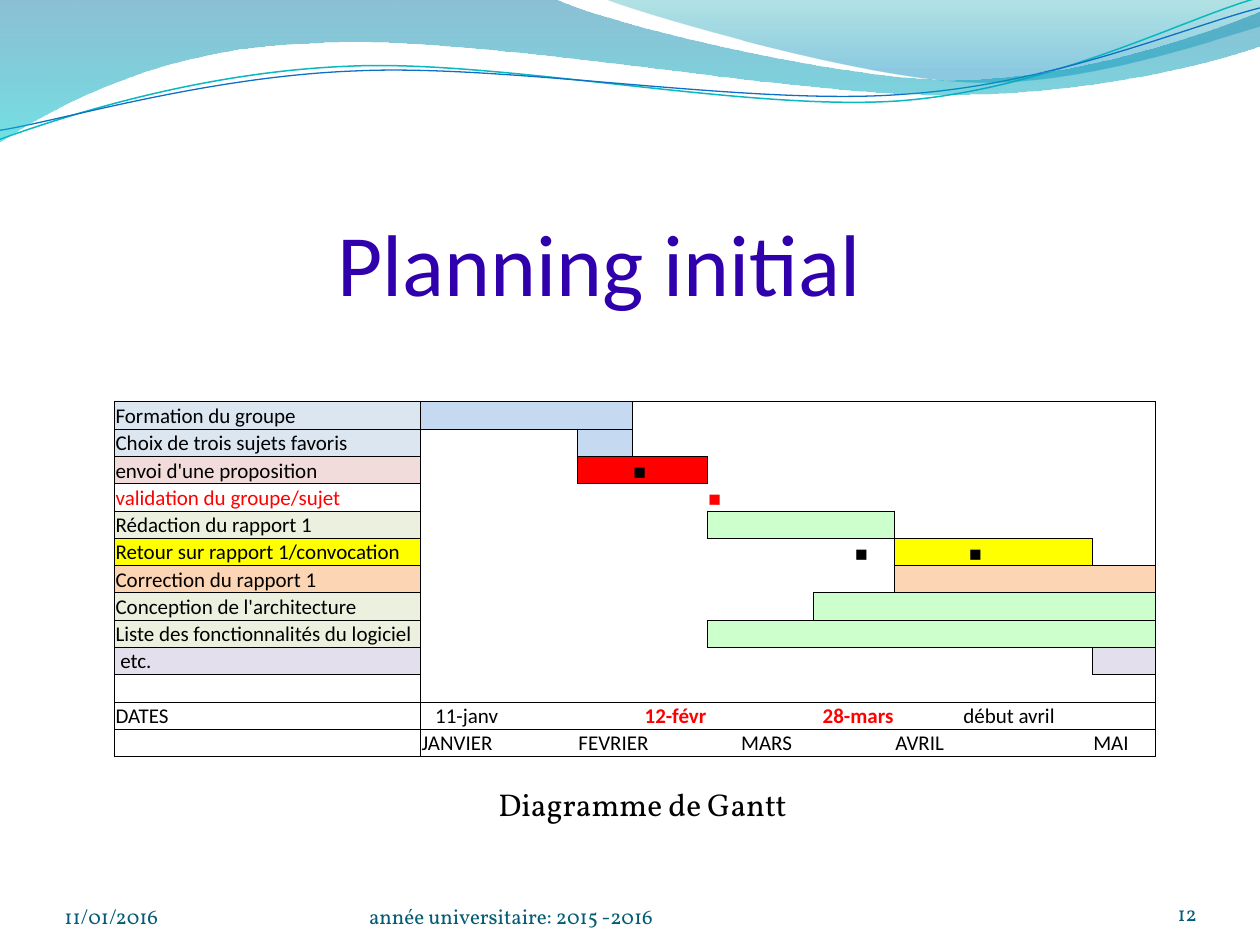
from collections import defaultdict
from dataclasses import dataclass

from lxml.etree import SubElement
from pptx import Presentation
from pptx.dml.color import RGBColor as Rgb
from pptx.enum.text import MSO_ANCHOR as Anchor, MSO_AUTO_SIZE as AutoSize, PP_ALIGN as Align
from pptx.oxml.ns import qn
from pptx.util import Cm, Pt


@dataclass(frozen=True)
class Theme:
    sans: str = "Calibri"
    serif: str = "Vollkorn"
    symbol: str = "Arial"
    title_size: float = 50
    caption_size: float = 18
    small_size: float = 12
    title: str = "3000AD"
    footer: str = "045D75"
    ink: str = "000000"
    alert: str = "FF0000"
    blue_label: str = "DCE6F1"
    blue_bar: str = "C5D9F1"
    pink: str = "F2DCDB"
    white: str = "FFFFFF"
    green_label: str = "EBF1DE"
    green_bar: str = "CCFFCC"
    yellow: str = "FFFF00"
    orange: str = "FCD5B4"
    violet: str = "E4DFEC"
    teal_line: str = "0AB8BF"
    blue_line: str = "0F6FC6"
    right_wave: tuple = (("00A1A9", 0, 30), ("008BBF", 0.8, 45))
    left_wave: tuple = (("0074A1", 0, 45), ("00C6CF", 1, 55))
    plain_table: str = "{2D5ABB26-0587-4C30-8999-92F81FD0307C}"


THEME = Theme()
MARK = "■"

LABEL_WIDTH = 6.17
PERIOD_WIDTHS = (1.58, 1.58, 1.11, 1.51, 0.66, 1.48, 1.63, 1.37, 1.38, 1.24, 1.27)
ROW_HEIGHT = 0.55

TASKS = (
    ("Formation du groupe", THEME.blue_label, (1, 3, THEME.blue_bar)),
    ("Choix de trois sujets favoris", THEME.blue_label, (3, 3, THEME.blue_bar)),
    ("envoi d'une proposition", THEME.pink, (3, 4, THEME.alert)),
    ("validation du groupe/sujet", THEME.white, None),
    ("Rédaction du rapport 1", THEME.green_label, (5, 7, THEME.green_bar)),
    ("Retour sur rapport 1/convocation", THEME.yellow, (8, 10, THEME.yellow)),
    ("Correction du rapport 1", THEME.orange, (8, 11, THEME.orange)),
    ("Conception de l'architecture", THEME.green_label, (7, 11, THEME.green_bar)),
    ("Liste des fonctionnalités du logiciel", THEME.green_label, (5, 11, THEME.green_bar)),
    (" etc.", THEME.violet, (11, 11, THEME.violet)),
    ("", THEME.white, None),
)
DATES, MONTHS = len(TASKS), len(TASKS) + 1
LAST = len(PERIOD_WIDTHS)

RIGHT_WAVE = (
    ((12.17, -0.03),),
    ((12.93, 0.28), (17.32, 1.57), (19.53, 1.65)),
    ((21.74, 1.75), (24.41, 0.81), (25.4, 0.53)),
    ((25.4, 0),),
)
TEAL_CURVE = (
    ((-0.05, 2.21),),
    ((1.19, 1.83), (4.01, 1.04), (7.06, 1.07)),
    ((10.06, 1.07), (15.01, 2.36), (18.08, 2.29)),
    ((21.13, 2.21), (23.88, 0.91), (25.4, 0.56)),
)
BLUE_CURVE = (
    ((-0.05, 2.03),),
    ((1.17, 1.9), (4.17, 1.14), (7.19, 1.17)),
    ((10.26, 1.17), (15.14, 2.26), (18.19, 2.16)),
    ((21.21, 2.11), (23.93, 1.07), (25.45, 0.76)),
)
LEFT_WAVE = (
    ((0, 0),),
    ((11.18, -0.03),),
    ((12.09, 0.43), (16.87, 1.6), (19.25, 1.6)),
    ((21.67, 1.6), (24.33, 0.66), (25.4, 0.23)),
    ((25.43, 0.91),),
    ((24.97, 1.12), (22.1, 1.93), (18.95, 1.91)),
    ((15.8, 1.91), (9.7, 0.71), (6.53, 0.86)),
    ((3.28, 0.91), (1.17, 2.11), (-0.03, 2.87)),
)


class SlideBuilder:
    def __init__(self, slide, theme):
        self.slide, self.theme = slide, theme

    def style(self, frame, font, size, color, align=Align.LEFT, bold=False):
        for paragraph in frame.paragraphs:
            paragraph.alignment = align
            for run in paragraph.runs:
                run.font.name, run.font.size, run.font.bold = font, Pt(size), bold
                run.font.color.rgb = Rgb.from_string(color)

    def text(self, words, box, font, size, color, align=Align.LEFT, top_inset=0):
        frame = self.slide.shapes.add_textbox(*map(Cm, box)).text_frame
        frame.text, frame.word_wrap = words, True
        frame.vertical_anchor = Anchor.BOTTOM
        frame.margin_left = frame.margin_right = frame.margin_bottom = 0
        frame.margin_top = Cm(top_inset)
        self.style(frame, font, size, color, align)
        return frame

    def outline(self, segments, closed):
        points = [(Cm(x), Cm(y)) for segment in segments for x, y in segment]
        pen = self.slide.shapes.build_freeform(*points[0])
        pen.add_line_segments(points[1:], close=closed)
        shape = pen.convert_to_shape()
        shape.shadow.inherit = False
        strokes = iter(list(shape._element.spPr.iter(qn("a:lnTo"))))
        for segment in segments[1:]:
            bend, *controls = [next(strokes) for _ in segment]
            if controls:
                bend.tag = qn("a:cubicBezTo")
            for control in controls:
                bend.append(control[0])
                control.getparent().remove(control)
        return shape

    def wave(self, segments, stops):
        shape = self.outline(segments, True)
        shape.fill.gradient()
        shape.fill.gradient_angle = 270
        for stop, (color, position, _) in zip(shape.fill.gradient_stops, stops):
            stop.color.rgb, stop.position = Rgb.from_string(color), position
        for tint, (_, _, opacity) in zip(shape._element.spPr.iter(qn("a:srgbClr")), stops):
            SubElement(tint, qn("a:alpha")).set("val", str(opacity * 1000))
        shape.line.fill.background()

    def curve(self, segments, color, width, tilt):
        shape = self.outline(segments, False)
        shape.fill.background()
        shape.line.color.rgb, shape.line.width = Rgb.from_string(color), Pt(width)
        shape.rotation = tilt

    def grid(self, left, top, widths, row_height, row_count):
        table = self.slide.shapes.add_table(
            row_count, len(widths), Cm(left), Cm(top), Cm(sum(widths)), Cm(row_height * row_count)).table
        table.first_row = table.horz_banding = False
        table._tbl.tblPr.find(qn("a:tableStyleId")).text = self.theme.plain_table
        for column, width in zip(table.columns, widths):
            column.width = Cm(width)
        for row in table.rows:
            row.height = Cm(row_height)
        for cell in table.iter_cells():
            cell.margin_left = cell.margin_right = cell.margin_top = Cm(0.02)
            cell.margin_bottom = 0
            cell.vertical_anchor = Anchor.BOTTOM
            end = SubElement(cell.text_frame.paragraphs[0]._p, qn("a:endParaRPr"))
            end.set("sz", str(self.theme.small_size * 100))
        return table

    def cell_text(self, cell, words, color, align=Align.LEFT, bold=False):
        cell.text_frame.text = words
        font = self.theme.symbol if MARK in words else self.theme.sans
        self.style(cell.text_frame, font, self.theme.small_size, color, align, bold)

    def boxes(self, table, areas):
        edges = defaultdict(set)
        for row, first, last, height in areas:
            for r in range(row, row + height):
                edges[r, first].add("L"), edges[r, first - 1].add("R")
                edges[r, last].add("R"), edges[r, last + 1].add("L")
            for c in range(first, last + 1):
                edges[row, c].add("T"), edges[row - 1, c].add("B")
                edges[row + height - 1, c].add("B"), edges[row + height, c].add("T")
        for r in range(len(table.rows)):
            for c in range(len(table.columns)):
                properties = table.cell(r, c)._tc.get_or_add_tcPr()
                for side in "LRTB":
                    border = SubElement(properties, qn(f"a:ln{side}"), w=str(Pt(0.5)))
                    if side in edges[r, c]:
                        SubElement(SubElement(border, qn("a:solidFill")), qn("a:srgbClr")).set("val", self.theme.ink)
                    else:
                        SubElement(border, qn("a:noFill"))

    def gantt(self):
        ink, alert = self.theme.ink, self.theme.alert
        table = self.grid(2.31, 8.1, (LABEL_WIDTH, *PERIOD_WIDTHS), ROW_HEIGHT, MONTHS + 1)
        areas = [(row, 0, 0, 1) for row in range(MONTHS + 1)]
        areas += [(row, *bar[:2], 1) for row, (_, _, bar) in enumerate(TASKS) if bar]
        areas += [(0, 1, LAST, DATES), (DATES, 1, LAST, 1), (MONTHS, 1, LAST, 1)]
        self.boxes(table, areas)
        for row, (label, tint, bar) in enumerate(TASKS):
            first, last, color = bar or (0, 0, tint)
            for column in {0, *range(first, last + 1)}:
                fill = table.cell(row, column).fill
                fill.solid()
                fill.fore_color.rgb = Rgb.from_string(color if column else tint)
            if label:
                self.cell_text(table.cell(row, 0), label, alert if tint == self.theme.white else ink)
        for row, column in ((3, 5), (DATES, 9), (MONTHS, 1), (MONTHS, 3)):
            table.cell(row, column).merge(table.cell(row, column + 1))
        for row, column, words, color in ((2, 4, MARK, ink), (3, 5, MARK, alert), (5, 7, MARK, ink),
                                          (5, 9, " " + MARK, ink), (DATES, 0, "DATES", ink),
                                          (DATES, 9, "début avril", ink)):
            self.cell_text(table.cell(row, column), words, color)
        table.cell(5, 7).margin_left = Cm(0.84)
        for column, date, key in ((1, "11-janv", False), (4, "12-févr", True), (7, "28-mars", True)):
            self.cell_text(table.cell(DATES, column), date, alert if key else ink, Align.RIGHT, key)
        for column, month in ((1, "JANVIER"), (3, "FEVRIER"), (6, "MARS"), (8, "AVRIL"), (11, "MAI")):
            self.cell_text(table.cell(MONTHS, column), month, ink)


def main():
    deck = Presentation()
    deck.slide_width, deck.slide_height = Cm(25.4), Cm(19.05)
    page = SlideBuilder(deck.slides.add_slide(deck.slide_layouts[6]), THEME)
    page.wave(RIGHT_WAVE, THEME.right_wave)
    page.curve(TEAL_CURVE, THEME.teal_line, 0.85, -2.7)
    page.curve(BLUE_CURVE, THEME.blue_line, 0.75, -2.7)
    page.wave(LEFT_WAVE, THEME.left_wave)
    small_print = (THEME.serif, THEME.small_size, THEME.footer)
    page.text("11/01/2016", (1.3, 17.7, 5.92, 1.02), *small_print)
    page.text("année universitaire: 2015 -2016", (7.44, 17.7, 9.32, 1.02), *small_print)
    page.text("Planning initial", (0, 1.96, 24.16, 4.37), THEME.sans, THEME.title_size, THEME.title, Align.CENTER, 0.13)
    page.gantt()
    page.text("12", (22.02, 17.65, 2.11, 1.02), *small_print, Align.RIGHT)
    caption = page.text("Diagramme de Gantt", (0.51, 15.7, 24.89, 1.02), THEME.serif, THEME.caption_size,
                        THEME.ink, Align.CENTER, 0.13)
    caption.margin_bottom = Cm(0.13)
    caption.vertical_anchor, caption.auto_size = Anchor.TOP, AutoSize.SHAPE_TO_FIT_TEXT
    deck.save("out.pptx")


if __name__ == "__main__":
    main()
